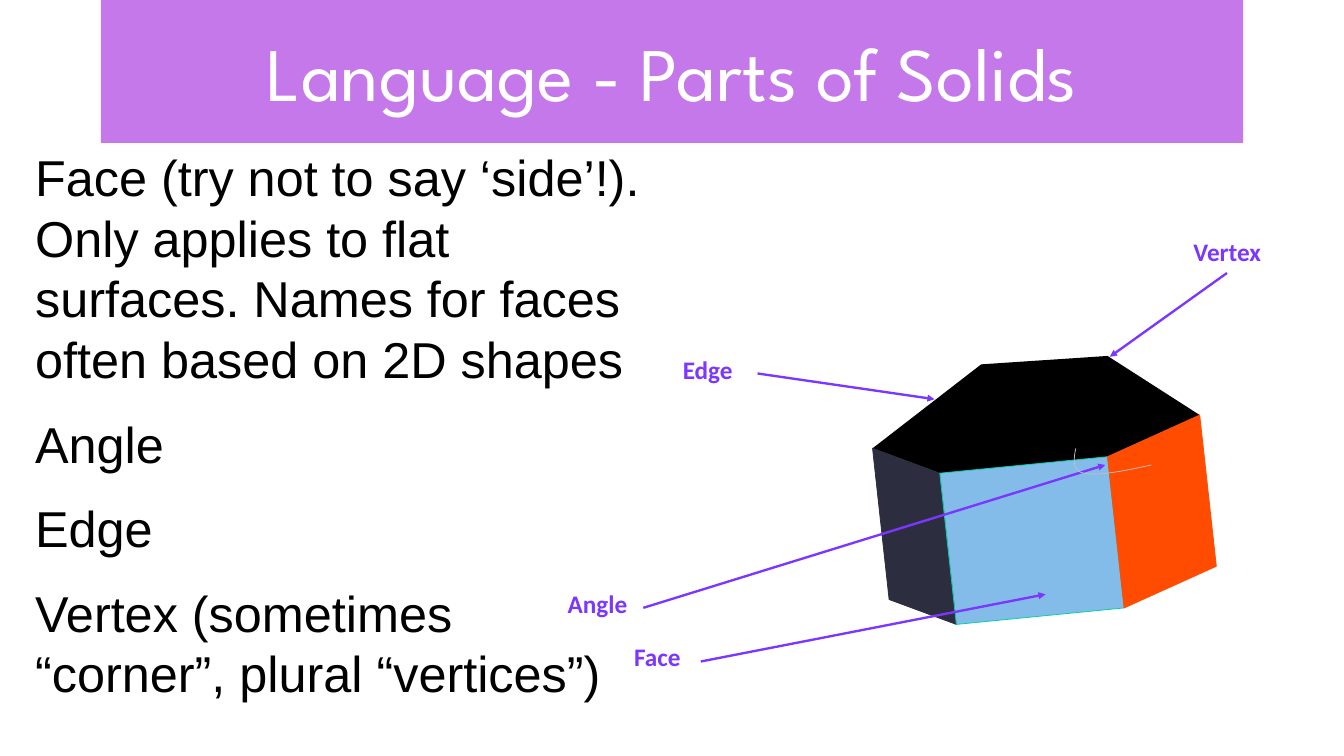
from lxml import etree
from pptx import Presentation
from pptx.dml.color import RGBColor
from pptx.enum.shapes import MSO_CONNECTOR
from pptx.enum.text import MSO_ANCHOR, MSO_AUTO_SIZE, PP_ALIGN
from pptx.oxml.ns import qn
from pptx.util import Pt

STRAIGHT = MSO_CONNECTOR.STRAIGHT
MIDDLE = MSO_ANCHOR.MIDDLE
NO_AUTOFIT = MSO_AUTO_SIZE.NONE
CENTER, LEFT = PP_ALIGN.CENTER, PP_ALIGN.LEFT

WHITE = RGBColor(0xFF, 0xFF, 0xFF)
BLACK = RGBColor(0x00, 0x00, 0x00)
BANNER = RGBColor(0xC5, 0x78, 0xE9)
PURPLE = RGBColor(0x7B, 0x36, 0xFF)
NAVY = RGBColor(0x2C, 0x2D, 0x3F)
BLUE = RGBColor(0x50, 0xA0, 0xE1)
TEAL = RGBColor(0x00, 0xD2, 0xA9)
ORANGE = RGBColor(0xFF, 0x4C, 0x00)
GREY = RGBColor(0xBF, 0xBF, 0xBF)

INSET = Pt(3)
LABEL_HEIGHT = 35.3
DEFINITIONS = [
    "Face (try not to say ‘side’!). Only applies to flat surfaces. "
    "Names for faces often based on 2D shapes",
    "Angle",
    "Edge",
    "Vertex (sometimes “corner”, plural “vertices”)",
]
TOP_FACE = [(831, 427), (934.5, 347), (1054.8, 339),
            (1142.6, 395.3), (1054.8, 435), (895, 450.7)]
PRISM_DROP = (15.8, 144)
SIDE_FACES = [
    (0, 5, NAVY, NAVY, 100),
    (5, 4, BLUE, TEAL, 70),
    (4, 3, ORANGE, ORANGE, 100),
]
# label, left, top, width, arrow start, arrow end
LABELS = [
    ("Face", 600.5, 607.7, 51, (667.5, 630), (995.8, 566)),
    ("Edge", 646.5, 334, 55, (721.5, 355.7), (890, 380.2)),
    ("Vertex", 1133.3, 221.8, 71, (1168.6, 260), (1057, 339.8)),
    ("Angle", 537, 557.3, 64, (612.7, 578.9), (1052.6, 442.8)),
]
ANGLE_ARC = [
    [(1024.6, 427), (1022.4, 437.8), (1021, 448.6), (1032.5, 450.7)],
    [(1032.5, 450.7), (1044.7, 453.6), (1070.6, 448.6), (1096.6, 442.8)],
]


def write_text(shape, paragraphs, font_name, size, color, align, bold=False):
    """Fill a shape with uniformly formatted, vertically centred paragraphs."""
    frame = shape.text_frame
    frame.text = "\n".join(paragraphs)
    frame.auto_size = NO_AUTOFIT
    frame.vertical_anchor = MIDDLE
    frame.margin_left = frame.margin_right = INSET
    frame.margin_top = frame.margin_bottom = INSET
    for paragraph in frame.paragraphs:
        paragraph.alignment = align
        for run in paragraph.runs:
            run.font.name = font_name
            run.font.size = Pt(size)
            run.font.bold = bold
            run.font.color.rgb = color
    return frame


def add_title(slide, title):
    """Turn the title placeholder into the coloured banner."""
    banner = slide.shapes.title
    banner.left, banner.top = Pt(96), Pt(0)
    banner.width, banner.height = Pt(1088), Pt(136)
    banner.fill.solid()
    banner.fill.fore_color.rgb = BANNER
    frame = write_text(banner, [title], "League Spartan", 72, WHITE, CENTER)
    frame.word_wrap = True


def add_definitions(slide, definitions):
    """Add the list of terms on the left."""
    box = slide.shapes.add_textbox(Pt(30.5), Pt(107), Pt(596), Pt(595))
    frame = write_text(box, definitions, "Arial", 48, BLACK, LEFT)
    frame.word_wrap = True
    for paragraph in frame.paragraphs:
        paragraph.space_before = Pt(23)
        paragraph.line_spacing = Pt(57.6)


def add_outline(slide, points, closed, fill=None, line=None, opacity=100):
    """Draw a polygon or open curve through the points."""
    corners = [(Pt(x), Pt(y)) for x, y in points]
    builder = slide.shapes.build_freeform(*corners[0])
    builder.add_line_segments(corners[1:], close=closed)
    outline = builder.convert_to_shape()
    outline.shadow.inherit = False
    if fill is None:
        outline.fill.background()
    else:
        outline.fill.solid()
        outline.fill.fore_color.rgb = fill
    if opacity < 100:
        color = outline.fill._xPr.find(qn("a:solidFill"))[0]
        etree.SubElement(color, qn("a:alpha"), val=str(opacity * 1000))
    if line is None:
        outline.line.fill.background()
    else:
        outline.line.color.rgb = line
        outline.line.width = Pt(0.75)


def add_prism(slide):
    """Draw the top face and the three visible side faces."""
    add_outline(slide, TOP_FACE, True, BLACK)
    drop_x, drop_y = PRISM_DROP
    for start, end, fill, line, opacity in SIDE_FACES:
        upper = [TOP_FACE[start], TOP_FACE[end]]
        lower = [(x + drop_x, y + drop_y) for x, y in reversed(upper)]
        add_outline(slide, upper + lower, True, fill, line, opacity)


def add_arrow(slide, start, end):
    """Draw a straight arrow from start to end."""
    arrow = slide.shapes.add_connector(STRAIGHT, *map(Pt, start + end))
    arrow.line.color.rgb = PURPLE
    arrow.line.width = Pt(2.25)
    etree.SubElement(arrow.line._get_or_add_ln(), qn("a:tailEnd"), type="triangle")
    etree.SubElement(arrow._element.spPr, qn("a:effectLst"))


def add_label(slide, term, left, top, width, start, end):
    """Name a part of the solid and point an arrow at it."""
    box = slide.shapes.add_textbox(Pt(left), Pt(top), Pt(width), Pt(LABEL_HEIGHT))
    frame = write_text(box, [term], "Calibri", 24, PURPLE, CENTER, bold=True)
    frame.word_wrap = False
    add_arrow(slide, start, end)


def bezier_points(controls, steps=12):
    """Return evenly sampled points of a cubic Bézier curve."""
    points = []
    for step in range(steps + 1):
        t = step / steps
        weights = ((1 - t) ** 3, 3 * t * (1 - t) ** 2, 3 * t ** 2 * (1 - t), t ** 3)
        points.append(tuple(sum(w * c for w, c in zip(weights, axis))
                            for axis in zip(*controls)))
    return points


def main():
    """Build and save the slide."""
    presentation = Presentation()
    presentation.slide_width, presentation.slide_height = Pt(1280), Pt(720)
    slide = presentation.slides.add_slide(presentation.slide_layouts[5])
    add_title(slide, "Language - Parts of Solids")
    add_definitions(slide, DEFINITIONS)
    add_prism(slide)
    for label in LABELS:
        add_label(slide, *label)
    first, second = map(bezier_points, ANGLE_ARC)
    add_outline(slide, first + second[1:], False, line=GREY)
    presentation.save("out.pptx")


if __name__ == "__main__":
    main()
